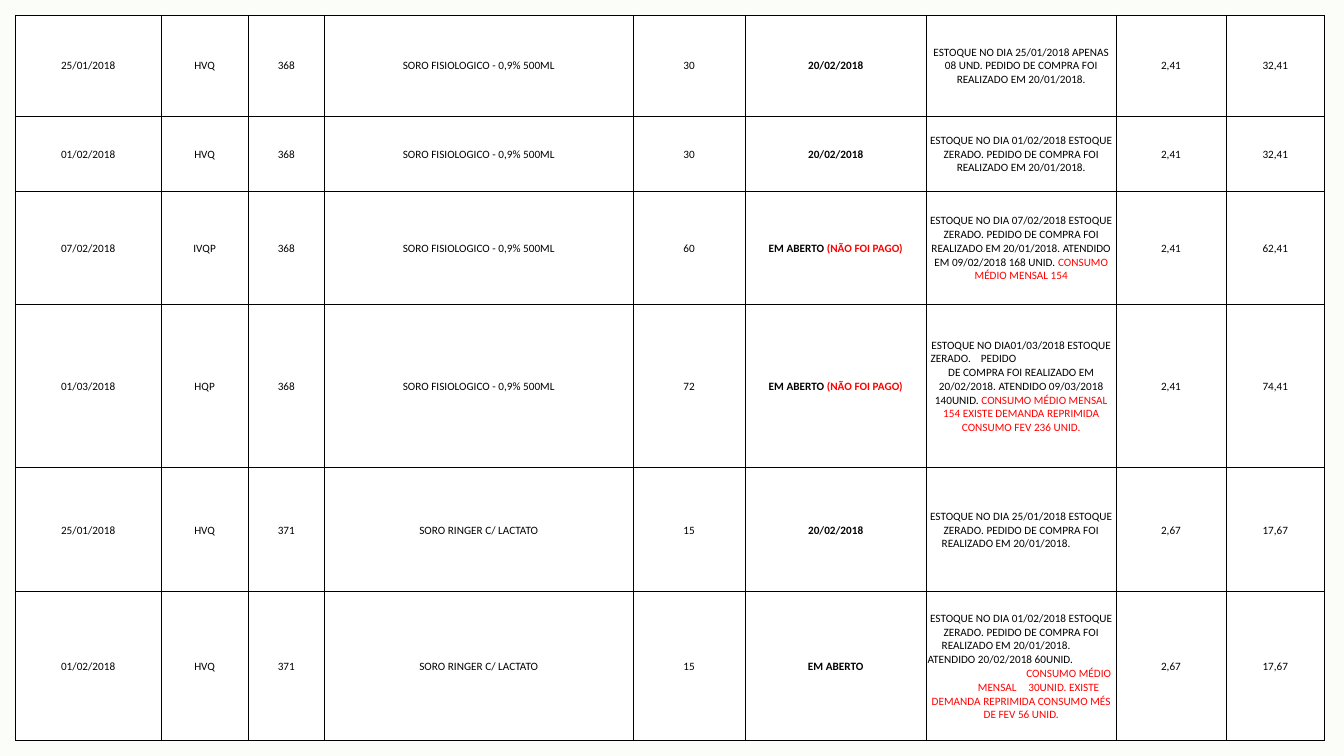
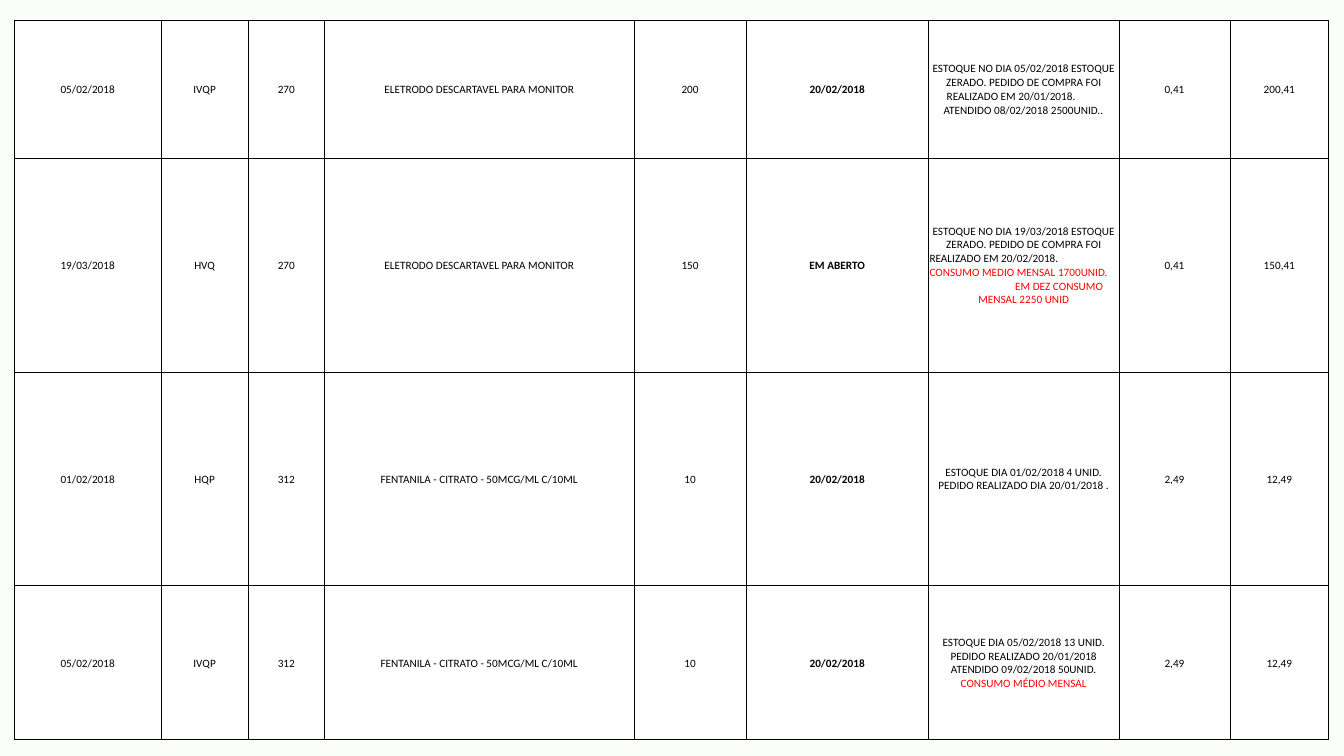
from dataclasses import dataclass

from lxml import etree
from pptx import Presentation
from pptx.dml.color import RGBColor
from pptx.enum.shapes import MSO_SHAPE
from pptx.enum.text import MSO_ANCHOR, PP_ALIGN
from pptx.oxml.ns import qn
from pptx.util import Inches, Pt

RECTANGLE = MSO_SHAPE.RECTANGLE
MIDDLE = MSO_ANCHOR.MIDDLE
LEFT, CENTER = PP_ALIGN.LEFT, PP_ALIGN.CENTER

BLACK = RGBColor(0x00, 0x00, 0x00)
WHITE = RGBColor(0xFF, 0xFF, 0xFF)
RED = RGBColor(0xFF, 0x00, 0x00)
TINT = RGBColor(0xF7, 0xFC, 0xF2)
TINT_ALPHA = 44000

FONT = "Calibri"
FONT_SIZE = Pt(8)
BORDER = Pt(0.5)
BORDER_SIDES = ("a:lnL", "a:lnR", "a:lnT", "a:lnB")
DUE_COLUMN = 5

PRODUCTS = {
    270: ("ELETRODO DESCARTAVEL PARA MONITOR", 0.41),
    312: ("FENTANILA - CITRATO - 50MCG/ML C/10ML", 2.49),
    368: ("SORO FISIOLOGICO - 0,9% 500ML", 2.41),
    371: ("SORO RINGER C/ LACTATO", 2.67),
}
PAID = "20/02/2018"
OPEN = "EM ABERTO"
UNPAID = "EM ABERTO |(NÃO FOI PAGO)"


@dataclass
class Placed:
    """A left-aligned line with its indent and tab stops in inches."""
    text: str
    indent: float = 0
    tabs: tuple = ()


@dataclass
class Loan:
    """One table row; in its texts, what follows a bar is red."""
    height: float
    date: str
    hospital: str
    code: int
    quantity: int
    due: str
    note: list

    def cells(self):
        name, price = PRODUCTS[self.code]
        return [[self.date], [self.hospital], [str(self.code)], [name],
                [str(self.quantity)], [self.due], self.note,
                [decimal(price)], [decimal(self.quantity + price)]]


SALINE_LOANS = [
    Loan(1, "25/01/2018", "HVQ", 368, 30, PAID, [
        "ESTOQUE NO DIA 25/01/2018 APENAS 08 UND. PEDIDO DE COMPRA FOI "
        "REALIZADO EM 20/01/2018."]),
    Loan(0.75, "01/02/2018", "HVQ", 368, 30, PAID, [
        "ESTOQUE NO DIA 01/02/2018 ESTOQUE ZERADO. PEDIDO DE COMPRA FOI "
        "REALIZADO EM 20/01/2018."]),
    Loan(1.12, "07/02/2018", "IVQP", 368, 60, UNPAID, [
        "ESTOQUE NO DIA 07/02/2018 ESTOQUE ZERADO. PEDIDO DE COMPRA FOI "
        "REALIZADO EM 20/01/2018. ATENDIDO EM 09/02/2018 168 UNID. "
        "|CONSUMO MÉDIO MENSAL 154"]),
    Loan(1.62, "01/03/2018", "HQP", 368, 72, UNPAID, [
        "ESTOQUE NO DIA01/03/2018 ESTOQUE",
        Placed("ZERADO.\tPEDIDO", 0.03, (1.46,)),
        "DE COMPRA FOI REALIZADO EM 20/02/2018. ATENDIDO 09/03/2018 "
        "140UNID. |CONSUMO MÉDIO MENSAL 154 EXISTE DEMANDA REPRIMIDA "
        "CONSUMO FEV 236 UNID."]),
    Loan(1.23, "25/01/2018", "HVQ", 371, 15, PAID, [
        "ESTOQUE NO DIA 25/01/2018 ESTOQUE ZERADO. PEDIDO DE COMPRA FOI",
        Placed("REALIZADO EM 20/01/2018.", 0.14)]),
    Loan(1.48, "01/02/2018", "HVQ", 371, 15, OPEN, [
        "ESTOQUE NO DIA 01/02/2018 ESTOQUE ZERADO. PEDIDO DE COMPRA FOI",
        Placed("REALIZADO EM 20/01/2018.", 0.14),
        Placed("ATENDIDO 20/02/2018 60UNID."),
        Placed("|CONSUMO MÉDIO", 0.98),
        Placed("|\tMENSAL\t30UNID. EXISTE", 0, (0.19, 0.95)),
        "|DEMANDA REPRIMIDA CONSUMO MÉS DE FEV 56 UNID."]),
]

SUPPLY_LOANS = [
    Loan(1.37, "05/02/2018", "IVQP", 270, 200, PAID, [
        "ESTOQUE NO DIA 05/02/2018 ESTOQUE ZERADO. PEDIDO DE COMPRA FOI",
        Placed("REALIZADO EM 20/01/2018.", 0.17),
        Placed("ATENDIDO 08/02/2018 2500UNID..", 0.14)]),
    Loan(2.12, "19/03/2018", "HVQ", 270, 150, OPEN, [
        "ESTOQUE NO DIA 19/03/2018 ESTOQUE ZERADO. PEDIDO DE COMPRA FOI",
        Placed("REALIZADO EM 20/02/2018."),
        Placed("|CONSUMO MEDIO MENSAL 1700UNID."),
        Placed("|EM DEZ CONSUMO", 0.85),
        "|MENSAL 2250 UNID"]),
    Loan(2.12, "01/02/2018", "HQP", 312, 10, PAID, [
        "ESTOQUE DIA 01/02/2018 4 UNID.",
        "PEDIDO REALIZADO DIA 20/01/2018 ."]),
    Loan(1.53, "05/02/2018", "IVQP", 312, 10, PAID, [
        "ESTOQUE DIA 05/02/2018 13 UNID. PEDIDO REALIZADO 20/01/2018 "
        "ATENDIDO 09/02/2018 50UNID. |CONSUMO MÉDIO MENSAL"]),
]

SLIDES = [
    (0.15, 0.15, (1.45, 0.86, 0.76, 3.06, 1.11, 1.8, 1.88, 1.09, 0.98),
     SALINE_LOANS),
    (0.14, 0.2, (1.46, 0.86, 0.76, 3.07, 1.11, 1.81, 1.89, 1.1, 0.98),
     SUPPLY_LOANS),
]


def decimal(value):
    return f"{value:.2f}".replace(".", ",")


def add_tint(prs, slide):
    sp = slide.shapes.add_shape(RECTANGLE, 0, 0, prs.slide_width,
                                prs.slide_height)
    sp.shadow.inherit = False
    sp.line.fill.background()
    sp.fill.solid()
    sp.fill.fore_color.rgb = TINT
    color = sp.fill._xPr.find(qn("a:solidFill"))[0]
    etree.SubElement(color, qn("a:alpha"), val=str(TINT_ALPHA))


def place(p, line):
    p.alignment = LEFT
    pPr = p._p.get_or_add_pPr()
    pPr.set("marL", str(Inches(line.indent)))
    pPr.set("indent", "0")
    if line.tabs:
        tabs = etree.SubElement(pPr, qn("a:tabLst"))
        for stop in line.tabs:
            etree.SubElement(tabs, qn("a:tab"), pos=str(Inches(stop)),
                             algn="l")


def write_paragraph(p, line, bold):
    if isinstance(line, Placed):
        place(p, line)
        text = line.text
    else:
        p.alignment = CENTER
        text = line
    for part, color in zip(text.split("|"), (BLACK, RED)):
        if part:
            r = p.add_run()
            r.text = part
            r.font.name, r.font.size = FONT, FONT_SIZE
            r.font.bold, r.font.color.rgb = bold, color


def set_borders(cell):
    tcPr = cell._tc.get_or_add_tcPr()
    for i, side in enumerate(BORDER_SIDES):
        ln = etree.Element(qn(side), w=str(BORDER))
        fill = etree.SubElement(ln, qn("a:solidFill"))
        etree.SubElement(fill, qn("a:srgbClr"), val=str(BLACK))
        tcPr.insert(i, ln)


def fill_cell(cell, lines, bold):
    cell.fill.solid()
    cell.fill.fore_color.rgb = WHITE
    cell.vertical_anchor = MIDDLE
    cell.margin_left = cell.margin_right = cell.margin_top = Inches(0.01)
    cell.margin_bottom = 0
    set_borders(cell)
    tf = cell.text_frame
    for i, line in enumerate(lines):
        p = tf.add_paragraph() if i else tf.paragraphs[0]
        write_paragraph(p, line, bold)


def add_loan_table(slide, left, top, widths, loans):
    table = slide.shapes.add_table(
        len(loans), len(widths), Inches(left), Inches(top),
        Inches(sum(widths)), Inches(sum(loan.height for loan in loans))).table
    table.first_row = table.horz_banding = False
    for column, width in zip(table.columns, widths):
        column.width = Inches(width)
    for row, loan in zip(table.rows, loans):
        row.height = Inches(loan.height)
        for i, (cell, lines) in enumerate(zip(row.cells, loan.cells())):
            fill_cell(cell, lines, bold=i == DUE_COLUMN)


def main():
    prs = Presentation()
    prs.slide_width, prs.slide_height = Inches(13.33), Inches(7.5)
    blank = prs.slide_layouts[6]
    for left, top, widths, loans in SLIDES:
        slide = prs.slides.add_slide(blank)
        add_tint(prs, slide)
        add_loan_table(slide, left, top, widths, loans)
    prs.save("out.pptx")


if __name__ == "__main__":
    main()
